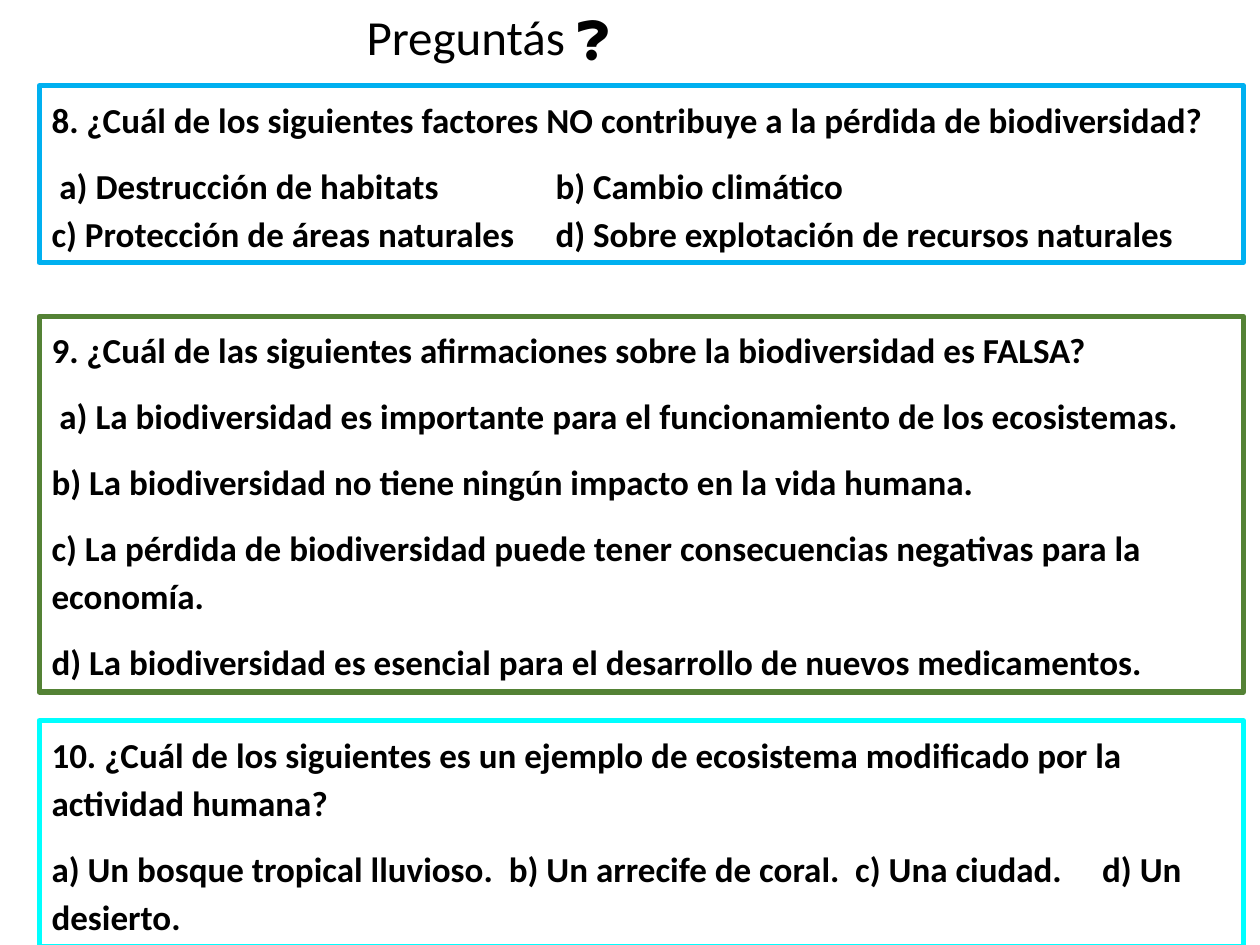
from lxml import etree
from pptx import Presentation
from pptx.dml.color import RGBColor
from pptx.enum import shapes, text
from pptx.oxml import ns
from pptx.util import Cm, Pt

BLACK = RGBColor(0x00, 0x00, 0x00)
BLUE = RGBColor(0x00, 0xB0, 0xF0)
GREEN = RGBColor(0x54, 0x82, 0x35)
CYAN = RGBColor(0x00, 0xFF, 0xFF)

BOX_LEFT, BOX_WIDTH = 0.79, 24.28
FIRST_INDENT = 0.16

QUESTIONS = [
    dict(top=1.73, height=3.56, color=BLUE, indented=True, tabs=(11.23, 16.74),
         question="8. ¿Cuál de los siguientes factores NO contribuye a la pérdida de biodiversidad?",
         answers=["a) Destrucción de habitats\t\tb) Cambio climático\v"
                  "c) Protección de áreas naturales\td) Sobre explotación de recursos naturales"]),
    dict(top=6.38, height=7.57, color=GREEN, indented=True,
         question="9. ¿Cuál de las siguientes afirmaciones sobre la biodiversidad es FALSA?",
         answers=["a) La biodiversidad es importante para el funcionamiento de los ecosistemas.",
                  "b) La biodiversidad no tiene ningún impacto en la vida humana.",
                  "c) La pérdida de biodiversidad puede tener consecuencias negativas para la economía.",
                  "d) La biodiversidad es esencial para el desarrollo de nuevos medicamentos."]),
    dict(top=14.53, height=4.55, color=CYAN, tabs=(9.22, 16.2, 21.18),
         question="10. ¿Cuál de los siguientes es un ejemplo de ecosistema modificado por la actividad humana?",
         answers=["a) Un bosque tropical lluvioso.\tb) Un arrecife de coral.\tc) Una ciudad.\td) Un desierto."]),
]


def write_text(paragraph, content, size=20, bold=True, line_spacing=None,
               space_after=None, indent=0, tabs=()):
    paragraph.text = content
    paragraph.alignment = text.PP_ALIGN.LEFT
    paragraph.font.name = "Calibri"
    for run in paragraph.runs:
        run.font.name = "Calibri"
        run.font.size = Pt(size)
        run.font.bold = bold
        run.font.color.rgb = BLACK
    if line_spacing:
        paragraph.line_spacing = line_spacing
    if space_after:
        paragraph.space_after = Pt(space_after)
    properties = paragraph._p.get_or_add_pPr()
    if indent:
        properties.set("marL", "0")
        properties.set("indent", str(Cm(indent)))
    if tabs:
        tab_list = etree.Element(ns.qn("a:tabLst"))
        for position in tabs:
            etree.SubElement(tab_list, ns.qn("a:tab"), pos=str(Cm(position)), algn="l")
        default_format = properties.find(ns.qn("a:defRPr"))
        if default_format is None:
            properties.append(tab_list)
        else:
            default_format.addprevious(tab_list)


def prepare_frame(shape):
    frame = shape.text_frame
    frame.word_wrap = True
    frame.auto_size = text.MSO_AUTO_SIZE.SHAPE_TO_FIT_TEXT
    frame.vertical_anchor = text.MSO_ANCHOR.TOP
    return frame


def add_title(slide, left, top, width, height):
    shape = slide.shapes.add_textbox(Cm(left), Cm(top), Cm(width), Cm(height))
    write_text(prepare_frame(shape).paragraphs[0], "Preguntás ❓", size=28, bold=False)


def add_question(slide, left, top, width, height, color, question, answers,
                 indented=False, tabs=()):
    shape = slide.shapes.add_shape(shapes.MSO_SHAPE.RECTANGLE,
                                   Cm(left), Cm(top), Cm(width), Cm(height))
    shape.shadow.inherit = False
    shape.fill.background()
    shape.line.color.rgb = color
    shape.line.width = Pt(3)
    frame = prepare_frame(shape)
    spacing = dict(line_spacing=1.15, space_after=10)
    write_text(frame.paragraphs[0], question, **spacing)
    for index, answer in enumerate(answers):
        indent = FIRST_INDENT if indented and index == 0 else 0
        write_text(frame.add_paragraph(), answer, indent=indent, tabs=tabs, **spacing)


def main():
    presentation = Presentation()
    presentation.slide_width, presentation.slide_height = Cm(25.4), Cm(19.05)
    slide = presentation.slides.add_slide(presentation.slide_layouts[6])
    add_title(slide, 7.14, 0, 11.1, 1.42)
    for question in QUESTIONS:
        add_question(slide, left=BOX_LEFT, width=BOX_WIDTH, **question)
    presentation.save("out.pptx")


if __name__ == "__main__":
    main()
